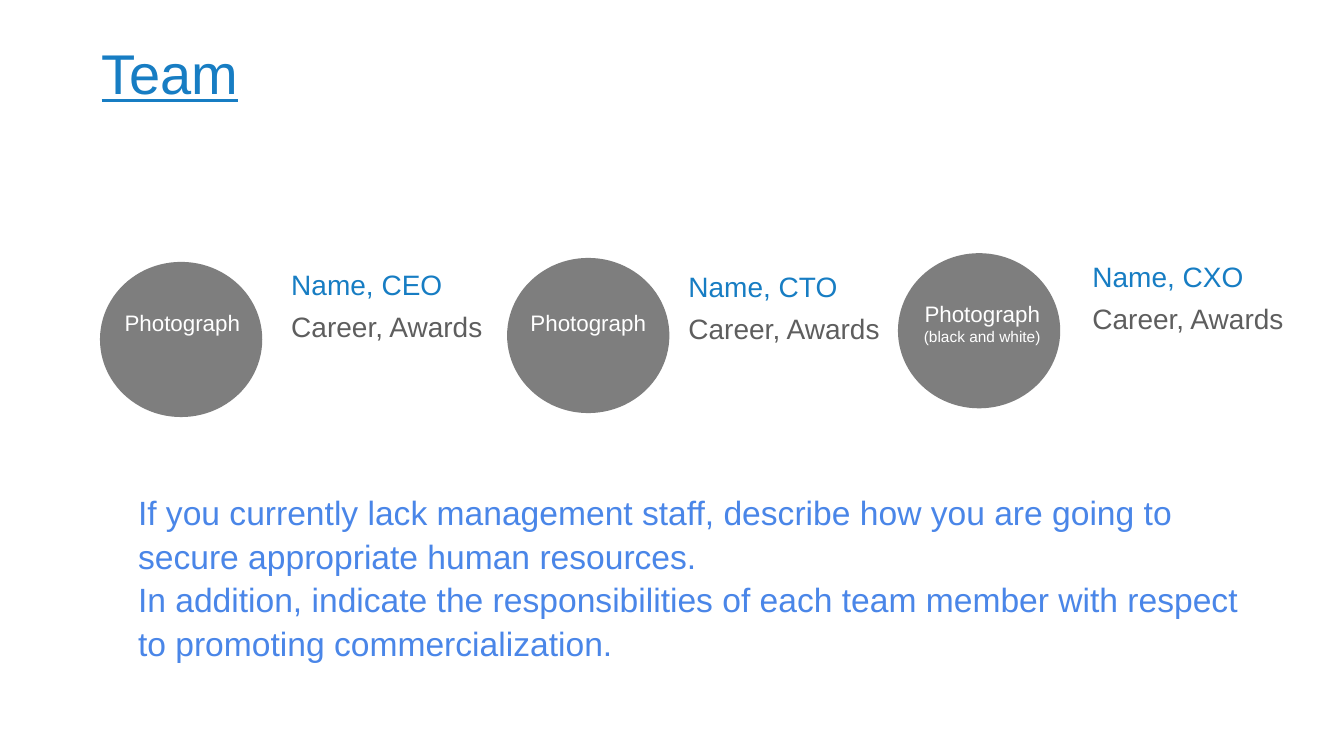
from pptx import Presentation
from pptx.dml.color import RGBColor
from pptx.enum.shapes import MSO_SHAPE
from pptx.enum.text import PP_ALIGN as Align
from pptx.util import Cm, Pt

BLUE, LIGHT_BLUE, GRAY, DARK_GRAY, WHITE = "177DC3", "4A86E8", "7E7E7E", "5E5E5E", "FFFFFF"
CIRCLE_SIZE = (4.09, 3.91)

# Positions are (left, top) in centimetres
MEMBERS = [
    {"role": "CEO", "circle": (2.52, 6.6), "label": (2.55, 7.75), "bio": (7.34, 6.45),
     "caption": ["Photograph"]},
    {"role": "CTO", "circle": (12.78, 6.5), "label": (12.78, 7.75), "bio": (17.35, 6.5),
     "caption": ["Photograph"]},
    {"role": "CXO", "circle": (22.63, 6.38), "label": (22.71, 7.54), "bio": (27.53, 6.25),
     "caption": ["Photograph", "(black and white)"]},
]
CAPTION_SIZES = [16, 11]
ADVICE = ("If you currently lack management staff, describe how you are going to "
          "secure appropriate human resources.\n"
          "In addition, indicate the responsibilities of each team member with "
          "respect to promoting commercialization.")


def rgb(color):
    return RGBColor.from_string(color)


def add_text(slide, position, size, lines, top_inset=0.03):
    """Add a text box; each line is (text, points, color, paragraph format, font format)."""
    box = slide.shapes.add_textbox(*map(Cm, position + size))
    frame = box.text_frame
    frame_format = {"word_wrap": True, "margin_left": 0, "margin_right": 0,
                    "margin_top": Cm(top_inset), "margin_bottom": 0}
    for name, value in frame_format.items():
        setattr(frame, name, value)
    for index, (text, points, color, paragraph_format, font_format) in enumerate(lines):
        paragraph = frame.add_paragraph() if index else frame.paragraphs[0]
        paragraph.text = text
        for name, value in paragraph_format.items():
            setattr(paragraph, name, value)
        for run in paragraph.runs:
            run.font.color.rgb = rgb(color)
            for name, value in {"name": "Arial", "size": Pt(points), **font_format}.items():
                setattr(run.font, name, value)


def add_member(slide, member):
    circle = slide.shapes.add_shape(MSO_SHAPE.OVAL, *map(Cm, member["circle"] + CIRCLE_SIZE))
    circle.shadow.inherit = False
    circle.fill.solid()
    circle.fill.fore_color.rgb = rgb(GRAY)
    circle.line.fill.background()

    caption = [(text, points, WHITE, {"alignment": Align.CENTER}, {})
               for text, points in zip(member["caption"], CAPTION_SIZES)]
    add_text(slide, member["label"], (CIRCLE_SIZE[0], 0.7 * len(caption)), caption)
    bio = [(f"Name, {member['role']}", 20, BLUE, {}, {}),
           ("Career, Awards", 20, DARK_GRAY, {"space_before": Pt(6)}, {})]
    add_text(slide, member["bio"], (5.2, 2.24), bio, top_inset=0.3)


def main():
    presentation = Presentation()
    presentation.slide_width, presentation.slide_height = Cm(33.87), Cm(19.05)
    slide = presentation.slides.add_slide(presentation.slide_layouts[6])

    add_text(slide, (2.56, 0.94), (28.7, 1.75), [("Team", 40, BLUE, {}, {"underline": True})])
    for member in MEMBERS:
        add_member(slide, member)
    advice_format = {"line_spacing": 1.08, "space_before": Pt(10.3)}
    add_text(slide, (3.48, 12.04), (28.04, 6.55),
             [(ADVICE, 24, LIGHT_BLUE, advice_format, {})], top_inset=0.28)
    presentation.save("out.pptx")


if __name__ == "__main__":
    main()
